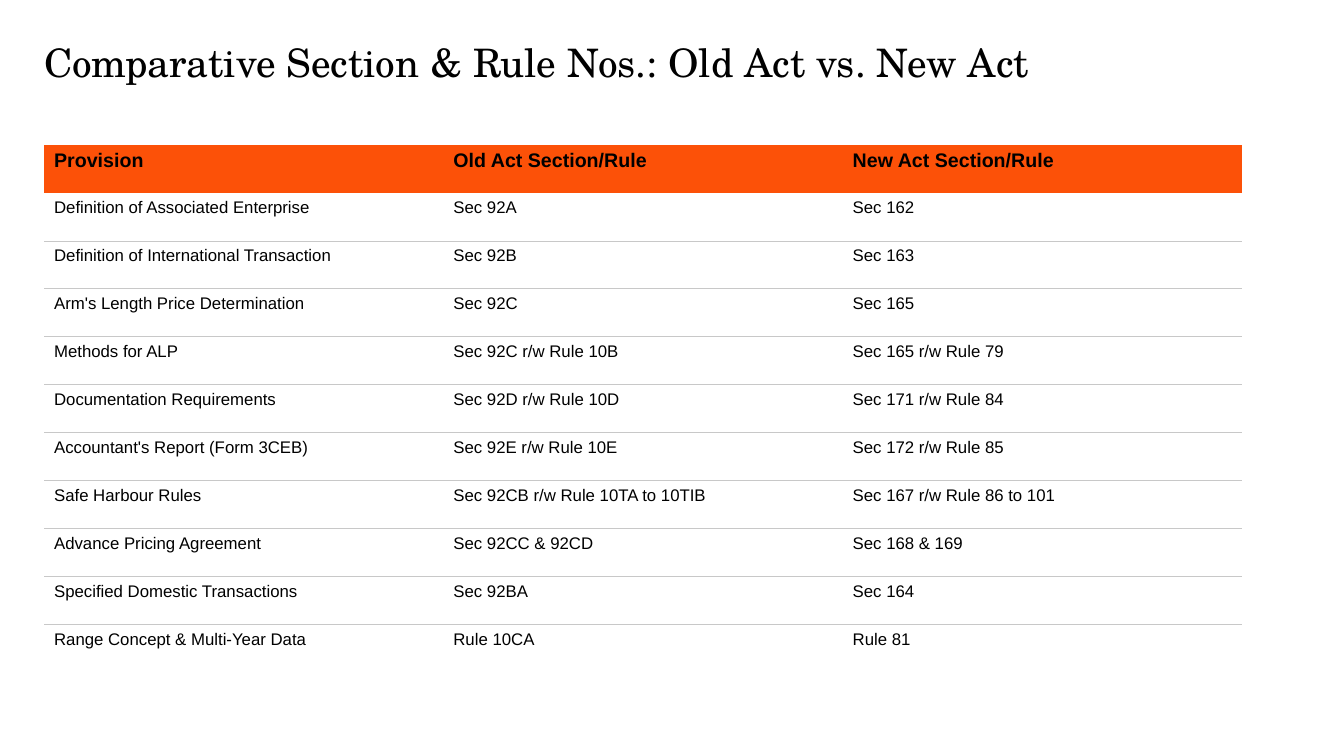
import pptx
import pptx.dml.color
import pptx.enum.text
import pptx.oxml
import pptx.oxml.ns
import pptx.util

EMU_PER_PX = 914400 / 100.8
BLACK = pptx.dml.color.RGBColor(0x00, 0x00, 0x00)
WHITE = pptx.dml.color.RGBColor(0xFF, 0xFF, 0xFF)
ORANGE = pptx.dml.color.RGBColor(0xFC, 0x51, 0x08)
RULE_GREY = pptx.dml.color.RGBColor(0xC8, 0xC8, 0xC8)

HEADINGS = ("Provision", "Old Act Section/Rule", "New Act Section/Rule")
PROVISIONS = (
    ("Definition of Associated Enterprise", "Sec 92A", "Sec 162"),
    ("Definition of International Transaction", "Sec 92B", "Sec 163"),
    ("Arm's Length Price Determination", "Sec 92C", "Sec 165"),
    ("Methods for ALP", "Sec 92C r/w Rule 10B", "Sec 165 r/w Rule 79"),
    ("Documentation Requirements", "Sec 92D r/w Rule 10D", "Sec 171 r/w Rule 84"),
    ("Accountant's Report (Form 3CEB)", "Sec 92E r/w Rule 10E", "Sec 172 r/w Rule 85"),
    ("Safe Harbour Rules", "Sec 92CB r/w Rule 10TA to 10TIB", "Sec 167 r/w Rule 86 to 101"),
    ("Advance Pricing Agreement", "Sec 92CC & 92CD", "Sec 168 & 169"),
    ("Specified Domestic Transactions", "Sec 92BA", "Sec 164"),
    ("Range Concept & Multi-Year Data", "Rule 10CA", "Rule 81"),
)


def px(length):
    return pptx.util.Emu(round(length * EMU_PER_PX))


def style_font(font, name, size, bold=False):
    font.name = name
    font.size = pptx.util.Pt(size)
    font.bold = bold
    font.color.rgb = BLACK


def add_title(slide, left, top, width, height):
    title = slide.shapes.add_textbox(px(left), px(top), px(width), px(height))
    frame = title.text_frame
    frame.word_wrap = True
    frame.vertical_anchor = pptx.enum.text.MSO_ANCHOR.TOP
    frame.margin_left = frame.margin_right = frame.margin_top = frame.margin_bottom = 0
    frame.text = "Comparative Section & Rule Nos.: Old Act vs. New Act"
    heading = frame.paragraphs[0]
    heading.line_spacing = 0.9
    style_font(heading.runs[0].font, "TeX Gyre Schola", 28)


def set_borders(cell, ruled_sides):
    properties = cell._tc.get_or_add_tcPr()
    for side in ("lnL", "lnR", "lnT", "lnB"):
        paint = "<a:noFill/>"
        if side in ruled_sides:
            paint = f'<a:solidFill><a:srgbClr val="{str(RULE_GREY)}"/></a:solidFill>'
        namespace = pptx.oxml.ns.nsdecls("a")
        properties.append(
            pptx.oxml.parse_xml(f'<a:{side} {namespace} w="9525">{paint}</a:{side}>')
        )


def add_comparison(slide, left, top, width, row_height):
    rows = (HEADINGS, *PROVISIONS)
    last_row = len(rows) - 1
    frame = slide.shapes.add_table(
        len(rows), len(HEADINGS), px(left), px(top), px(width), px(row_height * len(rows))
    )
    comparison = frame.table
    comparison.first_row = False
    comparison.horz_banding = False
    for column in comparison.columns:
        column.width = px(width / len(HEADINGS))
    for row_index, texts in enumerate(rows):
        is_heading = row_index == 0
        comparison.rows[row_index].height = px(row_height)
        ruled_sides = []
        if row_index > 1:
            ruled_sides.append("lnT")
        if 0 < row_index < last_row:
            ruled_sides.append("lnB")
        for column_index, text in enumerate(texts):
            cell = comparison.cell(row_index, column_index)
            cell.text = text
            size = 14 if is_heading else 12
            style_font(cell.text_frame.paragraphs[0].runs[0].font, "Arial", size, is_heading)
            set_borders(cell, ruled_sides)
            cell.fill.solid()
            cell.fill.fore_color.rgb = ORANGE if is_heading else WHITE


def main():
    deck = pptx.Presentation()
    deck.slide_width = px(1344)
    deck.slide_height = px(756)
    slide = deck.slides.add_slide(deck.slide_layouts[6])
    add_title(slide, 44, 44, 1231, 101)
    add_comparison(slide, 44, 145, 1198, 48)
    deck.save("out.pptx")


if __name__ == "__main__":
    main()
